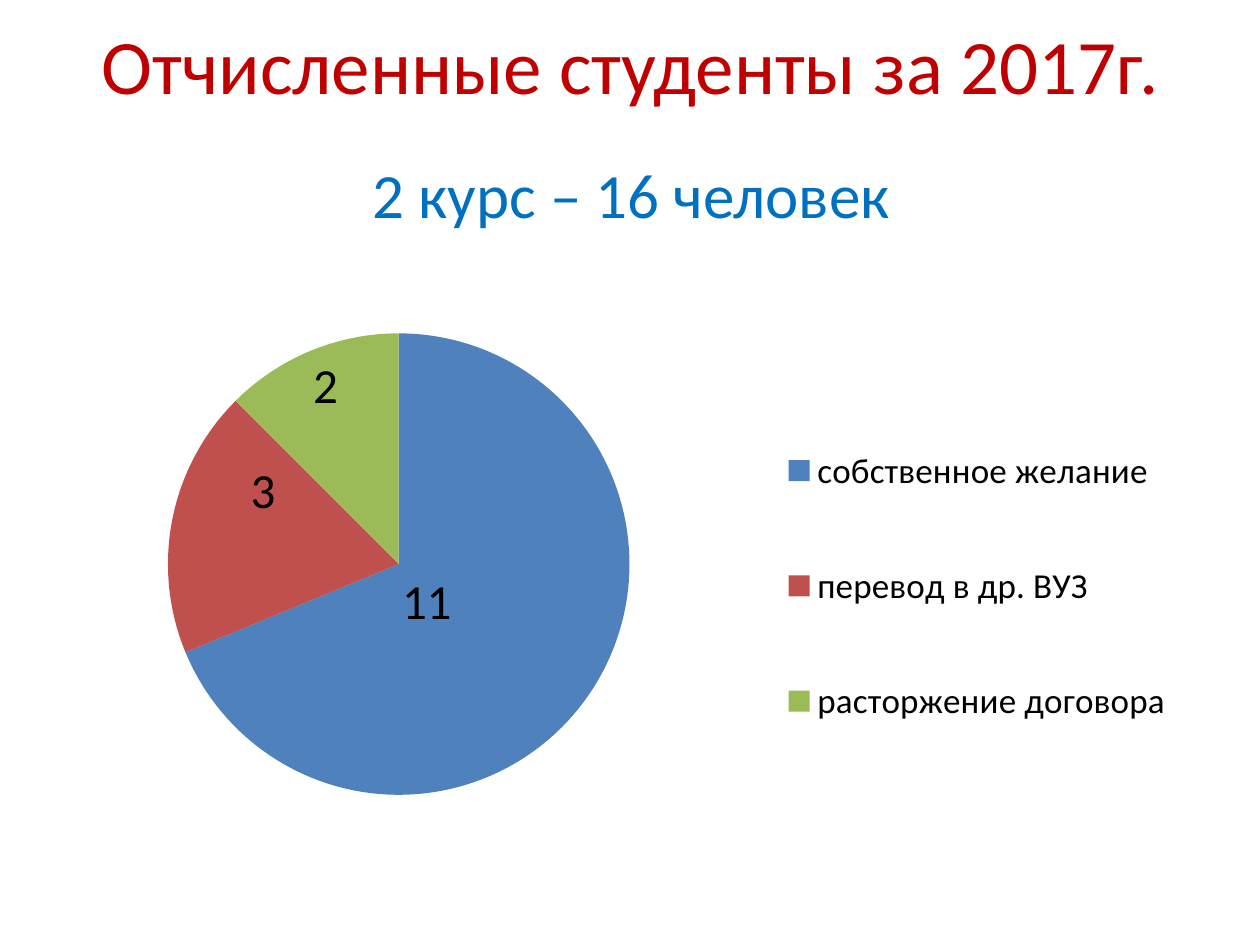
from lxml.etree import SubElement
from pptx import Presentation
from pptx.chart.data import CategoryChartData
from pptx.dml.color import RGBColor
from pptx.enum.chart import XL_CHART_TYPE, XL_LABEL_POSITION, XL_LEGEND_POSITION
from pptx.enum.text import MSO_ANCHOR, PP_ALIGN
from pptx.oxml.ns import qn
from pptx.util import Inches, Pt

FONT = "Calibri"
RED = RGBColor(0xC0, 0x00, 0x00)
BLUE = RGBColor(0x00, 0x70, 0xC0)
BLACK = RGBColor(0x00, 0x00, 0x00)

# Reason, number of students, slice colour
REASONS = [
    ("собственное желание", 11, RGBColor(0x4F, 0x81, 0xBD)),
    ("перевод в др. ВУЗ", 3, RGBColor(0xC0, 0x50, 0x4D)),
    ("расторжение договора", 2, RGBColor(0x9B, 0xBB, 0x59)),
]
# Slice index -> label shift from the slice centre, as shares of the chart
LABEL_SHIFTS = {0: (-0.06, -0.04), 1: (-0.02, -0.08)}

LEFT, WIDTH = Inches(0.51), Inches(9)
HEADING_HEIGHT = Inches(0.93)


def style_font(font, size, color):
    font.name = FONT
    font.size = Pt(size)
    font.color.rgb = color


def fill_heading(heading, box, text, size, color):
    heading.left, heading.top, heading.width, heading.height = box
    frame = heading.text_frame
    frame.word_wrap = True
    frame.vertical_anchor = MSO_ANCHOR.MIDDLE
    line = frame.paragraphs[0]
    line.text = text
    line.alignment = PP_ALIGN.CENTER
    style_font(line.font, size, color)


def set_layout(parent, after, **settings):
    """Place a chart part by hand, right after the named child element."""
    for old in parent.findall(qn("c:layout")):
        parent.remove(old)
    layout = SubElement(parent, qn("c:layout"))
    manual = SubElement(layout, qn("c:manualLayout"))
    for name, value in settings.items():
        SubElement(manual, qn(f"c:{name}")).set("val", str(value))
    if after is None:
        parent.insert(0, layout)
    else:
        parent.find(qn(after)).addnext(layout)


def add_reasons_pie(slide, box):
    data = CategoryChartData()
    data.categories = [reason for reason, _, _ in REASONS]
    data.add_series("Series 1", [count for _, count, _ in REASONS])
    chart = slide.shapes.add_chart(XL_CHART_TYPE.PIE, *box, data).chart
    chart.has_title = False
    style_font(chart.font, 18, BLACK)
    plot = chart.plots[0]
    plot.vary_by_categories = True

    # Slices and their values
    series = plot.series[0]
    labels = series.data_labels
    labels.show_value = True
    labels.position = XL_LABEL_POSITION.INSIDE_END
    style_font(labels.font, 28, BLACK)
    for index, (_, _, color) in enumerate(REASONS):
        fill = series.points[index].format.fill
        fill.solid()
        fill.fore_color.rgb = color
    for index, (x, y) in LABEL_SHIFTS.items():
        label = series.points[index].data_label
        style_font(label.font, 28, BLACK)
        label.position = XL_LABEL_POSITION.CENTER
        point_label = labels._element.findall(qn("c:dLbl"))[index]
        set_layout(point_label, "c:idx", x=x, y=y)

    # Legend and plot positions
    chart.has_legend = True
    legend = chart.legend
    legend.position = XL_LEGEND_POSITION.RIGHT
    legend.include_in_layout = False
    style_font(legend.font, 20, BLACK)
    set_layout(legend._element, "c:legendPos", xMode="edge", yMode="edge",
               x=0.62, y=0.15, w=0.37, h=0.67)
    set_layout(chart._chartSpace.chart.plotArea, None, layoutTarget="inner",
               xMode="edge", yMode="edge", x=0.02, y=0.08, w=0.55, h=0.74)


def main():
    prs = Presentation()
    prs.slide_width, prs.slide_height = Inches(10), Inches(7.5)
    slide = prs.slides.add_slide(prs.slide_layouts[5])

    # Title
    fill_heading(slide.shapes.title, (LEFT, Inches(0.04), WIDTH, HEADING_HEIGHT),
                 "Отчисленные студенты за 2017г.", 44, RED)
    # Chart
    add_reasons_pie(slide, (LEFT, Inches(2.25), WIDTH, Inches(4.95)))
    # Subtitle
    subtitle_box = (LEFT, Inches(1.07), WIDTH, HEADING_HEIGHT)
    fill_heading(slide.shapes.add_textbox(*subtitle_box), subtitle_box,
                 "2 курс – 16 человек", 36, BLUE)

    prs.save("out.pptx")


if __name__ == "__main__":
    main()
